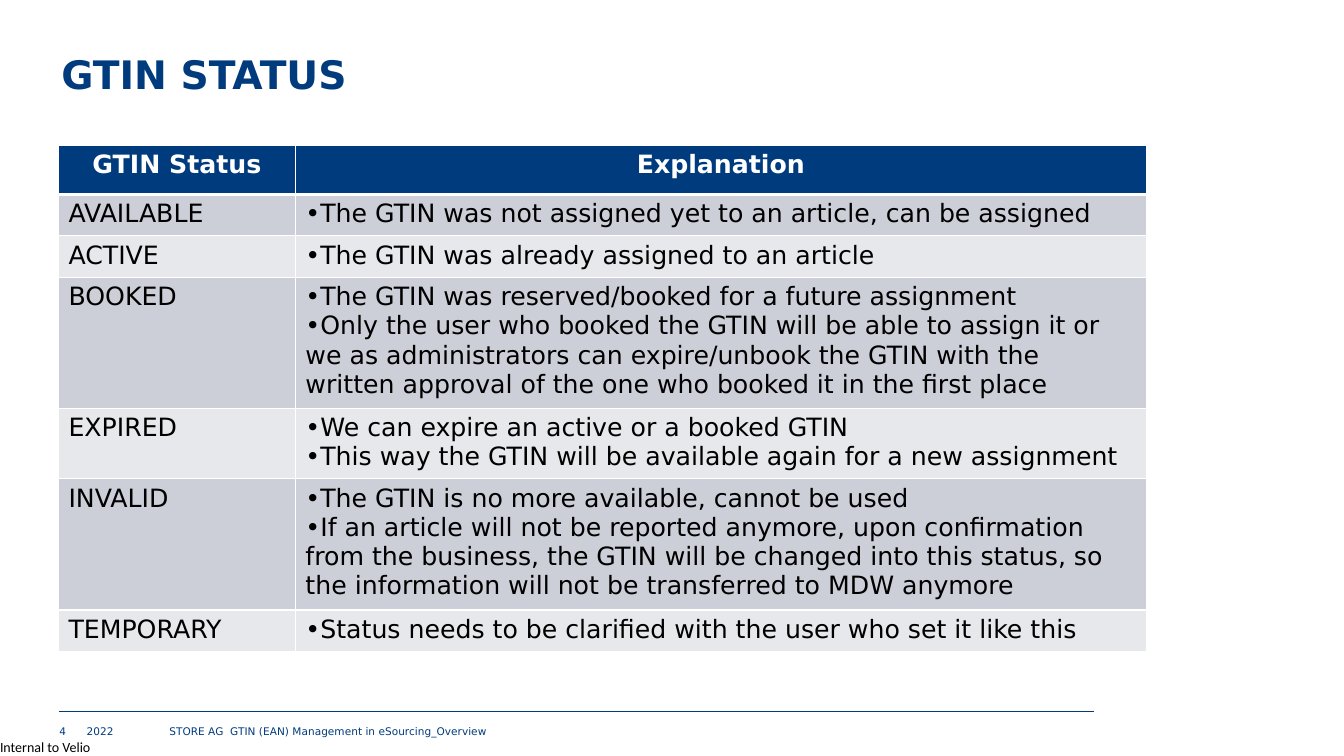
from lxml import etree
from pptx import Presentation
from pptx.dml.color import RGBColor
from pptx.enum.shapes import MSO_CONNECTOR
from pptx.enum.text import MSO_ANCHOR, PP_ALIGN
from pptx.oxml.ns import qn
from pptx.util import Pt

STRAIGHT = MSO_CONNECTOR.STRAIGHT
TOP = MSO_ANCHOR.TOP
LEFT, CENTER = PP_ALIGN.LEFT, PP_ALIGN.CENTER

NAVY = RGBColor(0x00, 0x3B, 0x7E)
WHITE = RGBColor(0xFF, 0xFF, 0xFF)
BLACK = RGBColor(0x00, 0x00, 0x00)
BAND_DARK = RGBColor(0xCC, 0xCE, 0xD8)
BAND_LIGHT = RGBColor(0xE7, 0xE8, 0xEC)

EMU_PER_PX = 9144
TITLE_ONLY = 5

TITLE_FONT = {"name": "DejaVu Sans", "size": Pt(28), "bold": True}
HEADER_FONT = {"name": "DejaVu Sans", "size": Pt(18), "bold": True}
BODY_FONT = {"name": "DejaVu Sans", "size": Pt(18), "bold": False}
FOOTER_FONT = {"name": "DejaVu Sans", "size": Pt(7.5)}
LABEL_FONT = {"name": "Calibri", "size": Pt(10)}

HEADER = ("GTIN Status", "Explanation")
STATUSES = [
    ("AVAILABLE", "•The GTIN was not assigned yet to an article, can be assigned"),
    ("ACTIVE", "•The GTIN was already assigned to an article"),
    ("BOOKED",
     "•The GTIN was reserved/booked for a future assignment\n"
     "•Only the user who booked the GTIN will be able to assign it or we as "
     "administrators can expire/unbook the GTIN with the written approval of "
     "the one who booked it in the first place"),
    ("EXPIRED",
     "•We can expire an active or a booked GTIN\n"
     "•This way the GTIN will be available again for a new assignment"),
    ("INVALID",
     "•The GTIN is no more available, cannot be used\n"
     "•If an article will not be reported anymore, upon confirmation from the "
     "business, the GTIN will be changed into this status, so the information "
     "will not be transferred to MDW anymore"),
    ("TEMPORARY", "•Status needs to be clarified with the user who set it like this"),
]
FOOTERS = [
    (59, 23, "4"),
    (86, 69, "2022"),
    (168, 917, "STORE AG  GTIN (EAN) Management in eSourcing_Overview"),
]


def px(*lengths):
    return [length * EMU_PER_PX for length in lengths]


class SlideBuilder:
    def __init__(self, width, height):
        self.presentation = Presentation()
        self.presentation.slide_width, self.presentation.slide_height = px(width, height)
        layout = self.presentation.slide_layouts[TITLE_ONLY]
        self.slide = self.presentation.slides.add_slide(layout)

    def fill_text(self, frame, text, font, color, align=LEFT):
        frame.text = text
        for paragraph in frame.paragraphs:
            paragraph.alignment = align
            for run in paragraph.runs:
                for name, value in font.items():
                    setattr(run.font, name, value)
                run.font.color.rgb = color

    def fit_frame(self, frame, wrap=True):
        """Remove the insets and hang the text from the top."""
        values = {"margin_left": 0, "margin_top": 0, "margin_right": 0,
                  "margin_bottom": 0, "vertical_anchor": TOP, "word_wrap": wrap}
        for name, value in values.items():
            setattr(frame, name, value)

    def title(self, box, text):
        shape = self.slide.shapes.title
        shape.left, shape.top, shape.width, shape.height = px(*box)
        self.fit_frame(shape.text_frame)
        self.fill_text(shape.text_frame, text, TITLE_FONT, NAVY)
        shape.text_frame.paragraphs[0].line_spacing = 0.9

    def text(self, box, text, font, color, wrap=True):
        frame = self.slide.shapes.add_textbox(*px(*box)).text_frame
        self.fit_frame(frame, wrap)
        self.fill_text(frame, text, font, color)

    def line(self, start, end, color, weight):
        connector = self.slide.shapes.add_connector(STRAIGHT, *px(*start, *end))
        connector.line.color.rgb = color
        connector.line.width = Pt(weight)
        etree.SubElement(connector._element.spPr, qn("a:effectLst"))

    def borders(self, cell, **weights):
        """Draw white cell borders; L, R, T and B are widths in points."""
        properties = cell._tc.get_or_add_tcPr()
        for side, weight in weights.items():
            border = etree.SubElement(properties, qn(f"a:ln{side}"), w=str(Pt(weight)))
            fill = etree.SubElement(border, qn("a:solidFill"))
            etree.SubElement(fill, qn("a:srgbClr"), val=str(WHITE))

    def table(self, left, top, widths, heights, rows):
        frame = self.slide.shapes.add_table(
            len(rows), len(widths), *px(left, top, sum(widths), sum(heights)))
        table = frame.table
        for column, width in zip(table.columns, px(*widths)):
            column.width = width
        for index, (row, height) in enumerate(zip(table.rows, px(*heights))):
            row.height = height
            is_header = index == 0
            band = NAVY if is_header else BAND_DARK if index % 2 else BAND_LIGHT
            for cell, text in zip(row.cells, rows[index]):
                self.borders(cell, L=1, R=1, T=3 if index == 1 else 1,
                             B=3 if is_header else 1)
                cell.fill.solid()
                cell.fill.fore_color.rgb = band
                if is_header:
                    self.fill_text(cell.text_frame, text, HEADER_FONT, WHITE, CENTER)
                else:
                    self.fill_text(cell.text_frame, text, BODY_FONT, BLACK)


def main():
    builder = SlideBuilder(1333, 750)
    builder.text((0, 733, 101, 17), "Internal to Velio", LABEL_FONT, BLACK, wrap=False)
    builder.line((59, 706), (1085, 706), NAVY, 0.5)
    builder.title((61, 55, 1231, 50), "GTIN STATUS")
    builder.table(58, 144, (235, 844), [49] + [41] * len(STATUSES), [HEADER] + STATUSES)
    for left, width, text in FOOTERS:
        builder.text((left, 719, width, 24), text, FOOTER_FONT, NAVY)
    builder.presentation.save("out.pptx")


if __name__ == "__main__":
    main()
